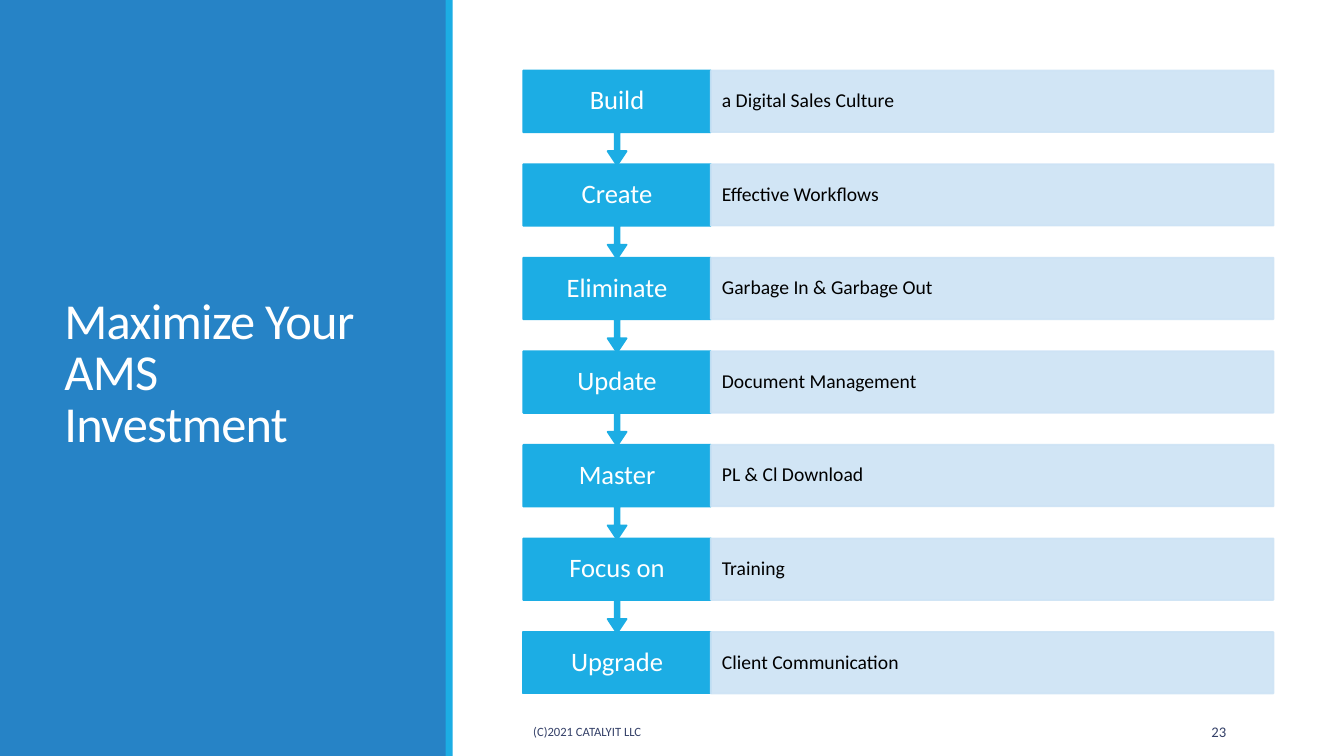
from lxml import etree
from pptx import Presentation, util as u
from pptx.dml.color import RGBColor
from pptx.enum import shapes, text
from pptx.oxml.ns import qn

BLUE, CYAN, PALE = "2683C6", "1CADE4", "CDE3F5"
WHITE, BLACK, NAVY = "FFFFFF", "000000", "344068"
LEFT, CENTER, RIGHT = text.PP_ALIGN.LEFT, text.PP_ALIGN.CENTER, text.PP_ALIGN.RIGHT

STEPS = [
    ("Build", "a Digital Sales Culture"),
    ("Create", "Effective Workflows"),
    ("Eliminate", "Garbage In & Garbage Out"),
    ("Update", "Document Management"),
    ("Master", "PL & Cl Download"),
    ("Focus on", "Training"),
    ("Upgrade", "Client Communication"),
]


def color(hex_value):
    return RGBColor.from_string(hex_value)


def set_attributes(target, values):
    for name, value in values.items():
        setattr(target, name, value)


def add_block(slide, kind, box, fill, outlined=False, opacity=None):
    block = slide.shapes.add_shape(kind, *map(u.Inches, box))
    block.shadow.inherit = False
    paints = [block.fill]
    if outlined:
        block.line.width = u.Pt(1.25)
        paints.append(block.line.fill)
    else:
        block.line.fill.background()
    for paint in paints:
        paint.solid()
        paint.fore_color.rgb = color(fill)
    if opacity is not None:
        for tint in block._element.spPr.iter(qn("a:srgbClr")):
            etree.SubElement(tint, qn("a:alpha"), val=str(opacity * 1000))
    return block


def write(shape, wording, size, ink, align=LEFT, insets=(0.1, 0.05), spacing=1.0):
    side, top = map(u.Inches, insets)
    frame = shape.text_frame
    set_attributes(frame, {
        "word_wrap": True,
        "vertical_anchor": text.MSO_ANCHOR.MIDDLE,
        "margin_left": side, "margin_right": side,
        "margin_top": top, "margin_bottom": top,
    })
    line = frame.paragraphs[0]
    set_attributes(line, {"alignment": align, "line_spacing": spacing})
    run = line.add_run()
    run.text = wording
    set_attributes(run.font, {"name": "Calibri", "size": u.Pt(size)})
    run.font.color.rgb = color(ink)
    return run


def add_label(slide, box, *args, **kwargs):
    return write(slide.shapes.add_textbox(*map(u.Inches, box)), *args, **kwargs)


def add_title_panel(slide, box):
    left, top, width, height = box
    rectangle = shapes.MSO_SHAPE.RECTANGLE
    add_block(slide, rectangle, box, BLUE)
    title = add_label(slide, (left + 0.54, top + 0.57, 3.37, 6.31),
                      "Maximize Your AMS Investment", 36, WHITE, spacing=0.85)
    title.font._element.set("spc", "-50")
    add_block(slide, rectangle, (left + width - 0.01, top, 0.07, height), CYAN)


def add_step(slide, box, action, subject, leads_on):
    left, top, width, height = box
    action_width = width / 4
    if leads_on:
        callout = add_block(slide, shapes.MSO_SHAPE.UP_ARROW_CALLOUT,
                            (left, top, action_width, 0.94), CYAN, outlined=True)
        callout.rotation = 180
        for index, share in enumerate((0.05, 0.1, 0.15, 0.65)):
            callout.adjustments[index] = share
    else:
        add_block(slide, shapes.MSO_SHAPE.RECTANGLE,
                  (left, top, action_width, height), CYAN, outlined=True)
    add_label(slide, (left, top, action_width, height), action, 19, WHITE,
              CENTER, (0.13, 0.15), 0.9)
    detail = add_block(slide, shapes.MSO_SHAPE.RECTANGLE,
                       (left + action_width, top, width - action_width, height),
                       PALE, outlined=True, opacity=90)
    write(detail, subject, 14, BLACK, LEFT, (0.11, 0.19), 0.9)


def add_steps(slide, box):
    left, top, width, height = box
    step_height = 0.61
    pitch = (height - step_height) / (len(STEPS) - 1)
    for index, (action, subject) in reversed(list(enumerate(STEPS))):
        add_step(slide, (left, top + index * pitch, width, step_height),
                 action, subject, index < len(STEPS) - 1)


def add_footer(slide, box):
    left, top, width, height = box
    number_width = 1.19
    add_label(slide, (left, top, 5.58, height), "(C)2021 CATALYIT LLC", 9, NAVY)
    add_label(slide, (left + width - number_width, top, number_width, height),
              "23", 10.5, NAVY, RIGHT)


def main():
    deck = Presentation()
    set_attributes(deck, {"slide_width": u.Inches(13.33), "slide_height": u.Inches(7.5)})
    slide = deck.slides.add_slide(deck.slide_layouts[6])
    add_title_panel(slide, (0, 0, 4.43, 7.5))
    add_footer(slide, (5.19, 7.06, 7.07, 0.4))
    add_steps(slide, (5.19, 0.7, 7.44, 6.18))
    deck.save("out.pptx")


if __name__ == "__main__":
    main()
